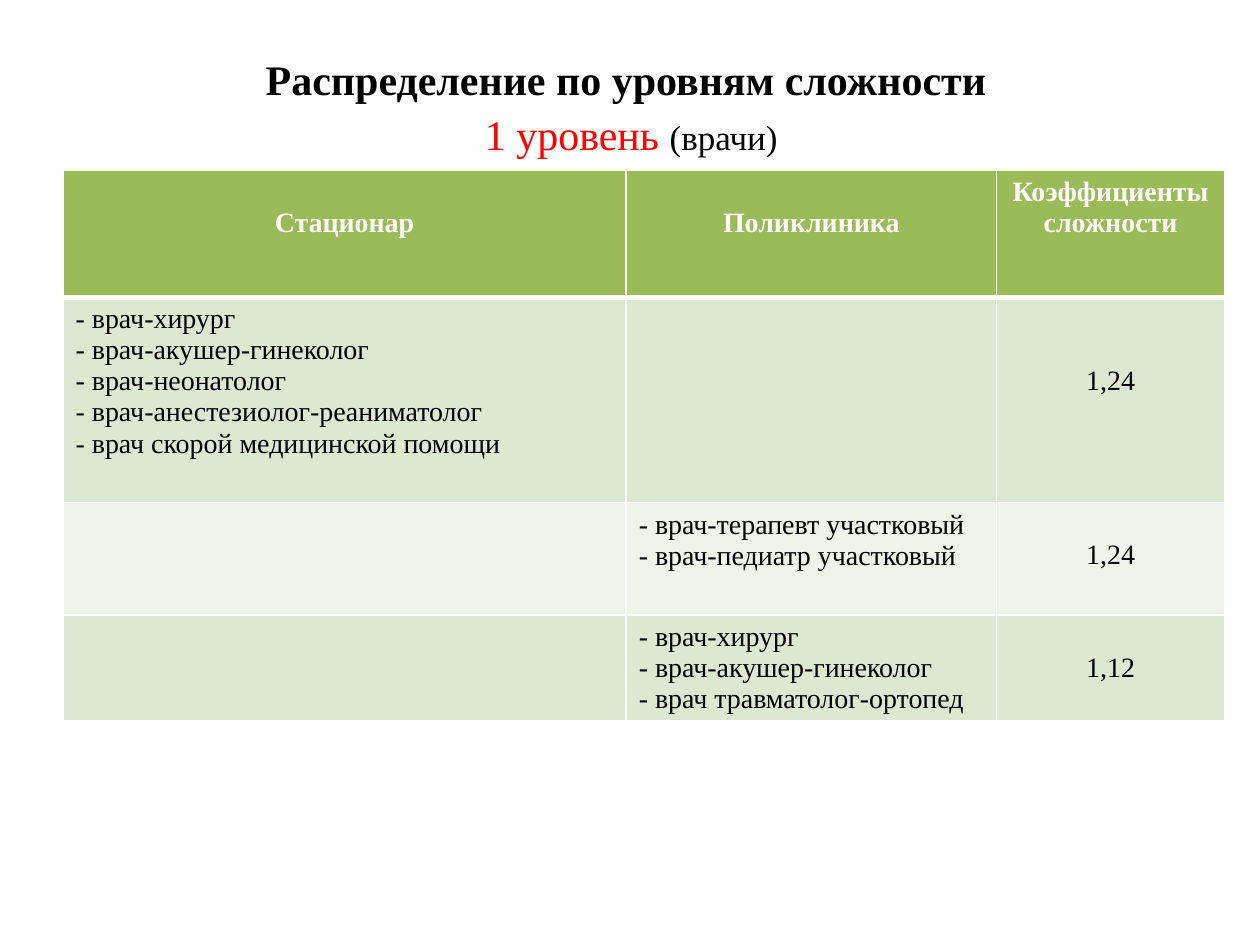
from dataclasses import dataclass
from itertools import product

from lxml import etree
from pptx import Presentation
from pptx import util as u
from pptx.dml.color import RGBColor
from pptx.enum import text
from pptx.oxml import ns


@dataclass(frozen=True)
class Theme:
    font: str = "Times New Roman"
    ink: str = "000000"
    accent: str = "FF0000"
    white: str = "FFFFFF"
    header: str = "9BBB59"
    bands: tuple[str, str] = ("DEE7D1", "EFF3EA")
    heading_size: float = 24
    note_size: float = 20
    table_size: float = 16
    table_line: float = 17.7
    cell_margin: float = 3.6
    thin: float = 1
    thick: float = 3


@dataclass(frozen=True)
class Entry:
    lines: tuple[str, ...] = ()
    skipped_lines: int = 0
    centred: bool = False


@dataclass(frozen=True)
class Level:
    height: float
    entries: tuple[Entry, Entry, Entry]


THEME = Theme()
COLUMN_WIDTHS = (321.84, 211.68, 130.32)
LEVELS = (
    Level(72.72, (
        Entry(("Стационар",), 1, True),
        Entry(("Поликлиника",), 1, True),
        Entry(("Коэффициенты сложности",), 0, True),
    )),
    Level(117.36, (
        Entry((
            "- врач-хирург",
            "- врач-акушер-гинеколог",
            "- врач-неонатолог",
            "- врач-анестезиолог-реаниматолог",
            "- врач скорой медицинской помощи",
        )),
        Entry(),
        Entry(("1,24",), 2, True),
    )),
    Level(64.08, (
        Entry(),
        Entry(("- врач-терапевт участковый", "- врач-педиатр участковый")),
        Entry(("1,24",), 1, True),
    )),
    Level(60, (
        Entry(),
        Entry((
            "- врач-хирург",
            "- врач-акушер-гинеколог",
            "- врач травматолог-ортопед",
        )),
        Entry(("1,12",), 1, True),
    )),
)


def format_font(font, size: float, colour: str, bold: bool = False) -> None:
    values = {"name": THEME.font, "size": u.Pt(size), "bold": bold}
    for attribute, value in values.items():
        setattr(font, attribute, value)
    font.color.rgb = RGBColor.from_string(colour)


def draw_heading(heading) -> None:
    place = {"left": 36.72, "top": 20.16, "width": 648, "height": 78.48}
    for attribute, value in place.items():
        setattr(heading, attribute, u.Pt(value))
    frame = heading.text_frame
    frame.vertical_anchor = text.MSO_ANCHOR.MIDDLE
    frame.auto_size = text.MSO_AUTO_SIZE.NONE
    line = frame.paragraphs[0]
    line.alignment = text.PP_ALIGN.CENTER
    line.line_spacing = 1.1
    parts = (
        ("Распределение по уровням сложности ", THEME.heading_size, THEME.ink, True),
        ("1 уровень ", THEME.heading_size, THEME.accent, False),
        ("(врачи)", THEME.note_size, THEME.ink, False),
    )
    for index, (wording, size, colour, bold) in enumerate(parts):
        if index == 1:
            line.add_line_break()
        run = line.add_run()
        run.text = wording
        format_font(run.font, size, colour, bold)


def draw_borders(cell, top: float, bottom: float) -> None:
    properties = cell._tc.get_or_add_tcPr()
    widths = {"lnL": THEME.thin, "lnR": THEME.thin, "lnT": top, "lnB": bottom}
    for index, (side, width) in enumerate(widths.items()):
        border = etree.Element(ns.qn(f"a:{side}"), w=str(u.Pt(width)))
        fill = etree.SubElement(border, ns.qn("a:solidFill"))
        etree.SubElement(fill, ns.qn("a:srgbClr"), val=THEME.white)
        properties.insert(index, border)


def draw_entry(cell, entry: Entry, row: int) -> None:
    is_header = row == 0
    cell.fill.solid()
    fill = THEME.header if is_header else THEME.bands[(row - 1) % 2]
    cell.fill.fore_color.rgb = RGBColor.from_string(fill)
    cell.margin_top = u.Pt(THEME.cell_margin + entry.skipped_lines * THEME.table_line)
    draw_borders(
        cell,
        top=THEME.thick if row == 1 else THEME.thin,
        bottom=THEME.thick if is_header else THEME.thin,
    )
    cell.text = "\n".join(entry.lines)
    for line in cell.text_frame.paragraphs:
        line.alignment = text.PP_ALIGN.CENTER if entry.centred else text.PP_ALIGN.LEFT
        format_font(line.font, THEME.table_size, THEME.ink)
        for run in line.runs:
            colour = THEME.white if is_header else THEME.ink
            format_font(run.font, THEME.table_size, colour, is_header)


def draw_levels(slide) -> None:
    height = sum(level.height for level in LEVELS)
    table = slide.shapes.add_table(
        len(LEVELS), len(COLUMN_WIDTHS),
        u.Pt(36), u.Pt(97.2), u.Pt(sum(COLUMN_WIDTHS)), u.Pt(height),
    ).table
    for column, width in zip(table.columns, COLUMN_WIDTHS):
        column.width = u.Pt(width)
    for row, level in zip(table.rows, LEVELS):
        row.height = u.Pt(level.height)
    for row, column in product(range(len(LEVELS)), range(len(COLUMN_WIDTHS))):
        draw_entry(table.cell(row, column), LEVELS[row].entries[column], row)


def main() -> None:
    deck = Presentation()
    deck.slide_width, deck.slide_height = u.Pt(720), u.Pt(540)
    slide = deck.slides.add_slide(deck.slide_layouts[5])
    draw_heading(slide.shapes.title)
    draw_levels(slide)
    deck.save("out.pptx")


if __name__ == "__main__":
    main()
